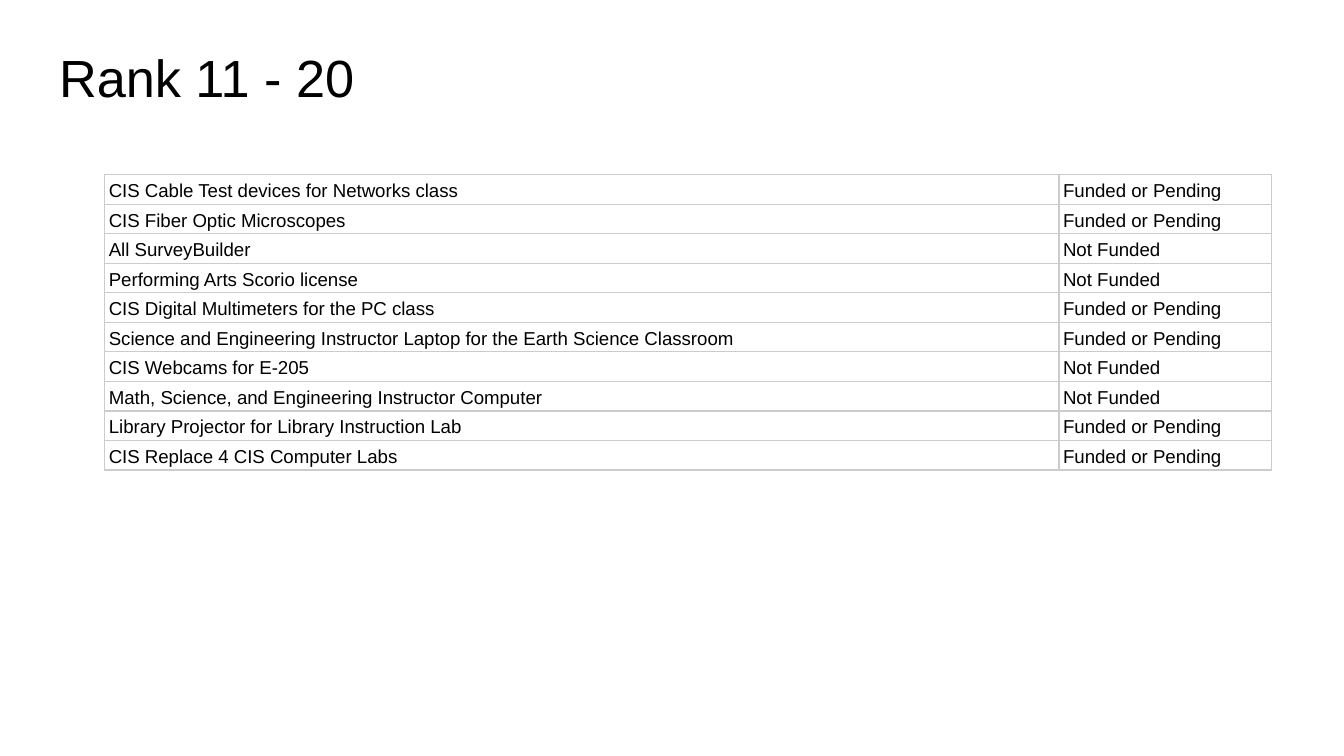
from typing import NamedTuple

from lxml import etree
from pptx import Presentation
from pptx.dml.color import RGBColor
from pptx.enum.text import MSO_ANCHOR, MSO_AUTO_SIZE, PP_ALIGN
from pptx.oxml.ns import qn
from pptx.util import Inches, Pt

LEFT = PP_ALIGN.LEFT
TOP, BOTTOM = MSO_ANCHOR.TOP, MSO_ANCHOR.BOTTOM
NO_FIT = MSO_AUTO_SIZE.NONE
TITLE_ONLY = 5

COLORS = {"text": "000000", "rule": "CCCCCC"}
FONT = "Arial"
SLIDE_W = 10
SLIDE_H = SLIDE_W * 9 / 16
WIDTHS = (7.1, 1.58)
ROW_H = 0.22
YES, NO = "Funded or Pending", "Not Funded"


class Request(NamedTuple):
    item: str
    status: str


REQUESTS = [
    Request("CIS Cable Test devices for Networks class", YES),
    Request("CIS Fiber Optic Microscopes", YES),
    Request("All SurveyBuilder", NO),
    Request("Performing Arts Scorio license", NO),
    Request("CIS Digital Multimeters for the PC class", YES),
    Request("Science and Engineering Instructor Laptop for the Earth Science Classroom", YES),
    Request("CIS Webcams for E-205", NO),
    Request("Math, Science, and Engineering Instructor Computer", NO),
    Request("Library Projector for Library Instruction Lab", YES),
    Request("CIS Replace 4 CIS Computer Labs", YES),
]


def set_font(para, size: float) -> None:
    para.alignment = LEFT
    para.font.name = FONT
    para.font.size = Pt(size)
    para.font.color.rgb = RGBColor.from_string(COLORS["text"])


def add_title(slide, text: str) -> None:
    title = slide.shapes.title
    title.left, title.top = Inches(0.34), Inches(0.24)
    title.width, title.height = Inches(9.32), Inches(0.63)
    frame = title.text_frame
    frame.text = text
    frame.word_wrap = True
    frame.auto_size = NO_FIT
    frame.vertical_anchor = TOP
    frame.margin_left = frame.margin_right = Inches(0.1)
    frame.margin_top = frame.margin_bottom = Inches(0.1)
    set_font(frame.paragraphs[0], 28)


def add_rules(cell) -> None:
    """Draw a thin line on all four sides of the cell."""
    props = cell._tc.get_or_add_tcPr()
    for side in ("lnL", "lnR", "lnT", "lnB"):
        line = etree.SubElement(props, qn(f"a:{side}"), w=str(Pt(0.75)))
        fill = etree.SubElement(line, qn("a:solidFill"))
        etree.SubElement(fill, qn("a:srgbClr"), val=COLORS["rule"])


def fill_cell(cell, text: str) -> None:
    cell.text = text
    cell.vertical_anchor = BOTTOM
    cell.margin_left = cell.margin_right = Inches(0.03)
    cell.margin_top = cell.margin_bottom = Inches(0.02)
    add_rules(cell)
    cell.fill.background()
    para = cell.text_frame.paragraphs[0]
    para.line_spacing = 1.15
    set_font(para, 10)


def add_requests(slide, requests: list[Request]) -> None:
    count = len(requests)
    table = slide.shapes.add_table(
        count, len(WIDTHS), Inches(0.78), Inches(1.3),
        Inches(sum(WIDTHS)), Inches(ROW_H * count),
    ).table
    table.first_row = table.horz_banding = False
    for column, width in zip(table.columns, WIDTHS):
        column.width = Inches(width)
    for row, request in zip(table.rows, requests):
        row.height = Inches(ROW_H)
        for cell, text in zip(row.cells, request):
            fill_cell(cell, text)


def main() -> None:
    deck = Presentation()
    deck.slide_width, deck.slide_height = Inches(SLIDE_W), Inches(SLIDE_H)
    slide = deck.slides.add_slide(deck.slide_layouts[TITLE_ONLY])
    add_title(slide, "Rank 11 - 20")
    add_requests(slide, REQUESTS)
    deck.save("out.pptx")


if __name__ == "__main__":
    main()
